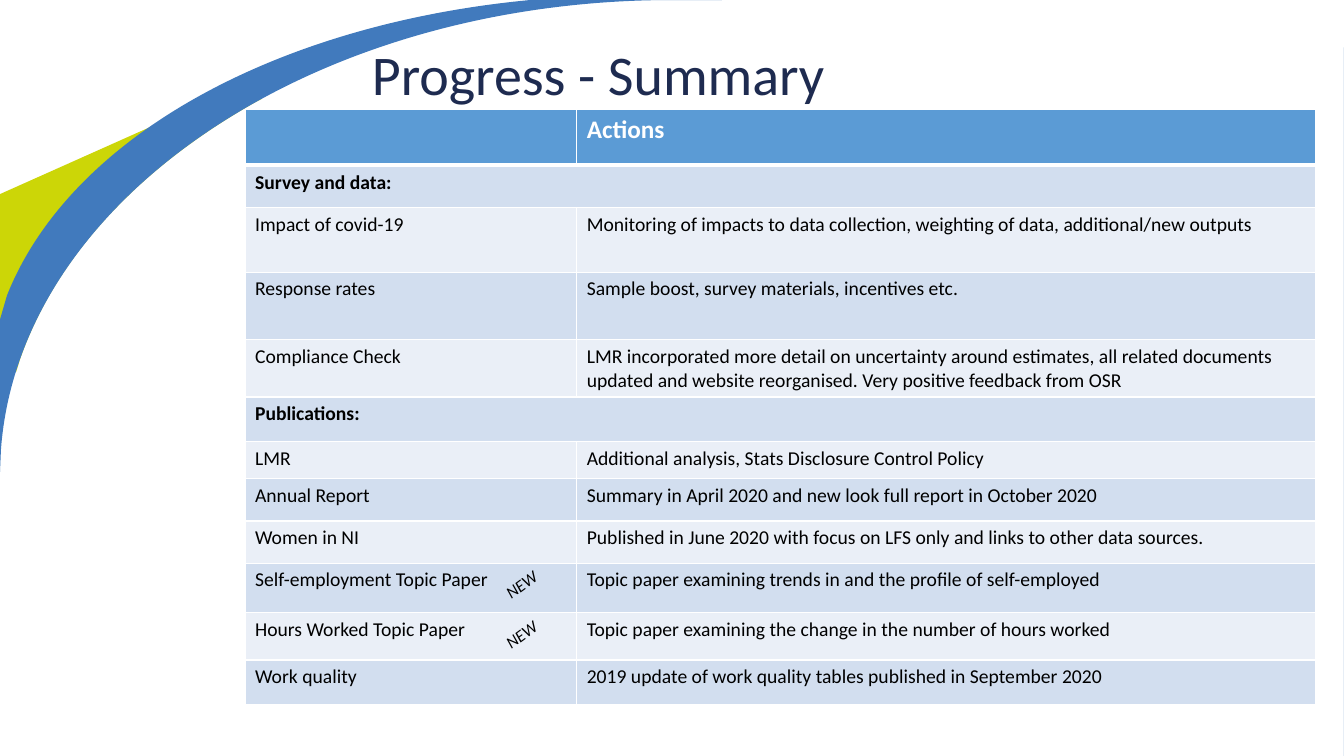
from dataclasses import dataclass

from lxml.etree import SubElement
from pptx import Presentation
from pptx.dml.color import RGBColor
from pptx.enum.text import MSO_ANCHOR, PP_ALIGN
from pptx.oxml.ns import qn
from pptx.util import Inches, Pt


@dataclass(frozen=True)
class Theme:
    """Colours, typeface and type sizes of the slide."""

    font: str = "Calibri"
    title: str = "1E2B50"
    text: str = "000000"
    white: str = "FFFFFF"
    lime: str = "CCD607"
    swoosh: str = "417ABD"
    header: str = "5B9BD5"
    bands: tuple = ("D2DEEF", "EAEFF7")
    title_size: int = 40
    header_size: int = 18
    body_size: int = 14
    tag_size: int = 12


class SlideBuilder:
    """Draw styled elements on one slide."""

    def __init__(self, slide, theme):
        self.slide = slide
        self.theme = theme

    def style(self, paragraph, size, color, bold=False, italic=False):
        """Set the font of a whole paragraph."""
        font = paragraph.font
        font.name = self.theme.font
        font.size = Pt(size)
        font.bold = bold
        font.italic = italic
        font.color.rgb = RGBColor.from_string(color)

    def outline(self, contours, color):
        """Fill closed contours; a step is one point, or two controls and an end."""
        steps = [step for contour in contours for step in contour[1:]]
        builder = None
        for contour in contours:
            start, *ends = [tuple(map(Inches, step[-2:])) for step in contour]
            if builder is None:
                builder = self.slide.shapes.build_freeform(*start)
            else:
                builder.move_to(*start)
            builder.add_line_segments(ends, close=True)
        shape = builder.convert_to_shape()
        for segment, step in zip(list(shape._element.iter(qn("a:lnTo"))), steps):
            if len(step) == 6:
                segment.tag = qn("a:cubicBezTo")
                for index in (0, 1):
                    x, y = map(Inches, step[2 * index:2 * index + 2])
                    position = {"x": str(x - shape.left), "y": str(y - shape.top)}
                    segment.insert(index, segment.makeelement(qn("a:pt"), position))
        shape.shadow.inherit = False
        shape.fill.solid()
        shape.fill.fore_color.rgb = RGBColor.from_string(color)
        shape.line.fill.background()

    def title(self, text, left, top, width, height):
        """Add the slide title."""
        frame = self.slide.shapes.add_textbox(*map(Inches, (left, top, width, height))).text_frame
        frame.word_wrap = True
        frame.vertical_anchor = MSO_ANCHOR.MIDDLE
        paragraph = frame.paragraphs[0]
        paragraph.text = text
        paragraph.line_spacing = 0.9
        self.style(paragraph, self.theme.title_size, self.theme.title)

    def tag(self, text, left, top):
        """Add a small slanted tag."""
        shape = self.slide.shapes.add_textbox(*map(Inches, (left, top, 0.56, 0.3)))
        shape.rotation = 323.9
        shape.text_frame.word_wrap = False
        paragraph = shape.text_frame.paragraphs[0]
        paragraph.text = text
        paragraph.alignment = PP_ALIGN.CENTER
        self.style(paragraph, self.theme.tag_size, self.theme.text, italic=True)

    def borders(self, cell, bottom):
        """Give a cell white borders, with its own bottom width."""
        properties = cell._tc.get_or_add_tcPr()
        for index, (side, width) in enumerate(zip("LRTB", (1, 1, 1, bottom))):
            line = properties.makeelement(qn(f"a:ln{side}"), {"w": str(Pt(width))})
            fill = SubElement(line, qn("a:solidFill"))
            SubElement(fill, qn("a:srgbClr"), val=self.theme.white)
            properties.insert(index, line)

    def table(self, rows, left, top, widths):
        """Add the table; a row without actions spans both columns."""
        theme = self.theme
        heights = [height for height, *_ in rows]
        size = (left, top, sum(widths), sum(heights))
        table = self.slide.shapes.add_table(len(rows), len(widths), *map(Inches, size)).table
        for column, width in zip(table.columns, widths):
            column.width = Inches(width)
        for index, (height, *texts) in enumerate(rows):
            table.rows[index].height = Inches(height)
            header = index == 0
            section = texts[1] == ""
            fill = theme.header if header else theme.bands[(index - 1) % 2]
            for cell, text in zip(table.rows[index].cells, texts):
                cell.fill.solid()
                cell.fill.fore_color.rgb = RGBColor.from_string(fill)
                self.borders(cell, 3 if header else 1)
                cell.text = text
                self.style(
                    cell.text_frame.paragraphs[0],
                    theme.header_size if header else theme.body_size,
                    theme.white if header else theme.text,
                    bold=header or section,
                )
            if section:
                table.cell(index, 0).merge(table.cell(index, 1))


LIME_WEDGE = [
    [(2.52, 0.8), (2.6, 0.98), (2.54, 1.01), (1.4, 1.65, 0.56, 2.53, 0.2, 3.56),
     (0.16, 3.69), (-0.01, 3.32), (-0.01, 1.93)],
]
SWOOSH = [
    [(13.33, 0.47), (13.33, 7.5), (13.33, 1.59)],
    [(7.02, -0.01), (7.08, -0.01), (7.16, 0), (6.67, 0), (3.1, 0, 0.19, 1.98, 0.01, 4.46),
     (0, 4.69), (0, 4.74), (-0.01, 4.72), (0, 3.17), (0.07, 2.93),
     (0.69, 1.37, 2.72, 0.24, 5.26, 0), (5.49, -0.01)],
]
ROWS = [
    (0.55, "", "Actions"),
    (0.42, "Survey and data:", ""),
    (0.64, "Impact of covid-19",
     "Monitoring of impacts to data collection, weighting of data, additional/new outputs"),
    (0.67, "Response rates", "Sample boost, survey materials, incentives etc."),
    (0.57, "Compliance Check",
     "LMR incorporated more detail on uncertainty around estimates, all related documents "
     "updated and website reorganised. Very positive feedback from OSR"),
    (0.44, "Publications:", ""),
    (0.37, "LMR", "Additional analysis, Stats Disclosure Control Policy"),
    (0.42, "Annual Report", "Summary in April 2020 and new look full report in October 2020"),
    (0.42, "Women in NI",
     "Published in June 2020 with focus on LFS only and links to other data sources."),
    (0.49, "Self-employment Topic Paper",
     "Topic paper examining trends in and the profile of self-employed"),
    (0.47, "Hours Worked Topic Paper",
     "Topic paper examining the change in the number of hours worked"),
    (0.44, "Work quality", "2019 update of work quality tables published in September 2020"),
]


def main():
    """Build and save the progress summary slide."""
    presentation = Presentation()
    presentation.slide_width = Inches(13.33)
    presentation.slide_height = Inches(7.5)
    theme = Theme()
    slide = presentation.slides.add_slide(presentation.slide_layouts[6])
    builder = SlideBuilder(slide, theme)
    builder.outline(LIME_WEDGE, theme.lime)
    builder.outline(SWOOSH, theme.swoosh)
    builder.title("Progress - Summary", 3.59, 0.11, 9.28, 1.31)
    builder.table(ROWS, 2.43, 1.09, (3.29, 7.33))
    for top in (5.65, 6.14):
        builder.tag("NEW", 4.89, top)
    presentation.save("out.pptx")


if __name__ == "__main__":
    main()
